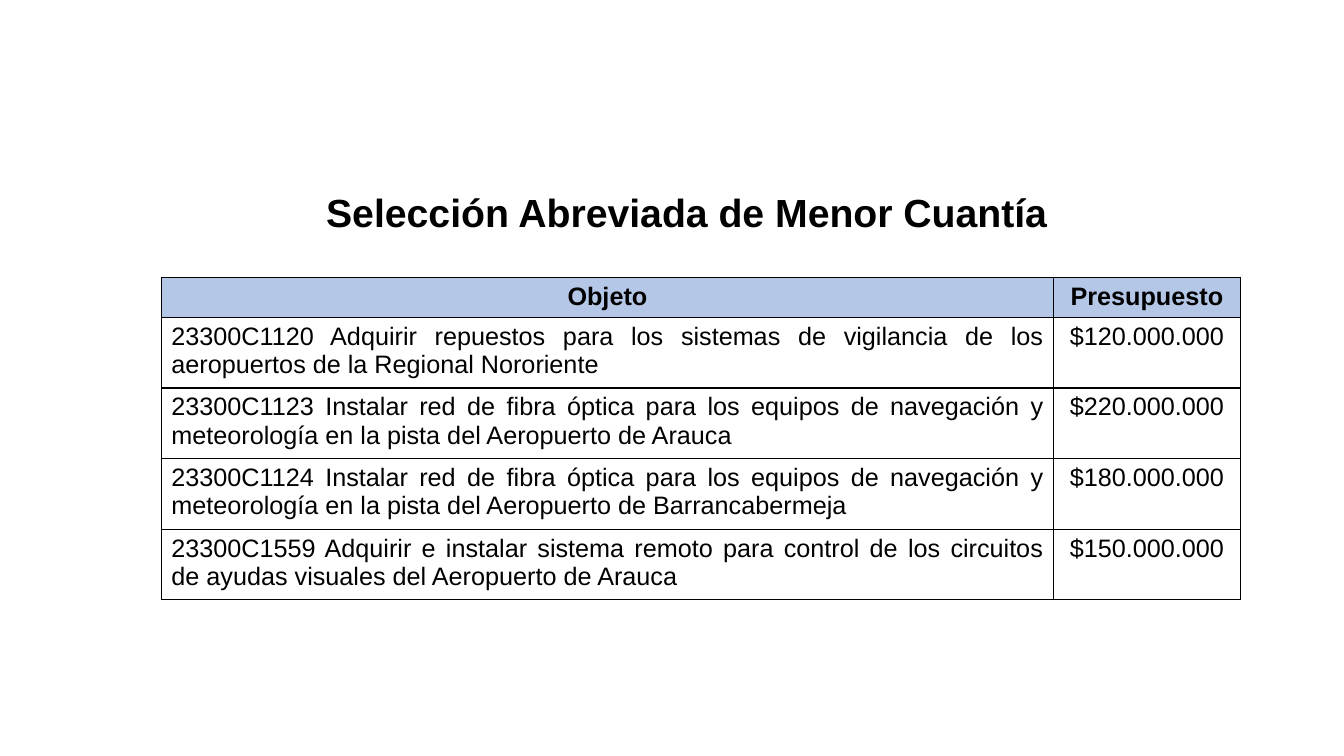
from lxml.etree import SubElement
from pptx import Presentation
from pptx.dml.color import RGBColor
from pptx.enum.text import MSO_ANCHOR, PP_ALIGN
from pptx.oxml.ns import qn
from pptx.util import Inches, Pt

TITLE = "Selección Abreviada de Menor Cuantía"
HEADER = ("Objeto", "Presupuesto")
CONTRACTS = [
    ("23300C1120 Adquirir repuestos para los sistemas de vigilancia de los "
     "aeropuertos de la Regional Nororiente", "$120.000.000"),
    ("23300C1123 Instalar red de fibra óptica para los equipos de navegación y "
     "meteorología en la pista del Aeropuerto de Arauca", "$220.000.000"),
    ("23300C1124 Instalar red de fibra óptica para los equipos de navegación y "
     "meteorología en la pista del Aeropuerto de Barrancabermeja", "$180.000.000"),
    ("23300C1559 Adquirir e instalar sistema remoto para control de los circuitos "
     "de ayudas visuales del Aeropuerto de Arauca", "$150.000.000"),
]
COLORS = {"text": "000000", "border": "000000", "header": "B4C7E7"}
COLUMNS = (8.85, 1.85)
HEADER_ROW, CONTRACT_ROW = 0.4, 0.7
TABLE_LEFT, TABLE_TOP = 1.6, 2.75


def write(tf, text, size=18, bold=False, align=PP_ALIGN.CENTER):
    p = tf.paragraphs[0]
    p.alignment = align
    r = p.add_run()
    r.text = text
    r.font.name = "Arial"
    r.font.size = Pt(size)
    r.font.bold = bold
    r.font.color.rgb = RGBColor.from_string(COLORS["text"])


def add_borders(cell):
    tcPr = cell._tc.get_or_add_tcPr()
    for i, side in enumerate(("lnL", "lnR", "lnT", "lnB")):
        ln = SubElement(tcPr, qn(f"a:{side}"), w=str(Pt(1)))
        fill = SubElement(ln, qn("a:solidFill"))
        SubElement(fill, qn("a:srgbClr"), val=COLORS["border"])
        tcPr.insert(i, ln)


def add_title(s):
    sp = s.shapes.title
    sp.left, sp.top = Inches(1.46), Inches(1.82)
    sp.width, sp.height = Inches(sum(COLUMNS)), Inches(0.57)
    tf = sp.text_frame
    tf.word_wrap = True
    tf.vertical_anchor = MSO_ANCHOR.MIDDLE
    write(tf, TITLE, size=28, bold=True)


def add_contracts(s):
    rows = [HEADER, *CONTRACTS]
    heights = [HEADER_ROW] + [CONTRACT_ROW] * len(CONTRACTS)
    table = s.shapes.add_table(
        len(rows), len(COLUMNS), Inches(TABLE_LEFT), Inches(TABLE_TOP),
        Inches(sum(COLUMNS)), Inches(sum(heights))).table
    table.first_row = table.horz_banding = False
    for column, width in zip(table.columns, COLUMNS):
        column.width = Inches(width)
    for i, (row, height) in enumerate(zip(rows, heights)):
        table.rows[i].height = Inches(height)
        for j, text in enumerate(row):
            cell = table.cell(i, j)
            if i == 0:
                cell.fill.solid()
                cell.fill.fore_color.rgb = RGBColor.from_string(COLORS["header"])
            else:
                cell.fill.background()
            add_borders(cell)
            justified = i > 0 and j == 0
            write(cell.text_frame, text, bold=i == 0,
                  align=PP_ALIGN.JUSTIFY if justified else PP_ALIGN.CENTER)


def main():
    prs = Presentation()
    prs.slide_width, prs.slide_height = Inches(13.33), Inches(7.5)
    s = prs.slides.add_slide(prs.slide_layouts[5])
    add_title(s)
    add_contracts(s)
    prs.save("out.pptx")


if __name__ == "__main__":
    main()
